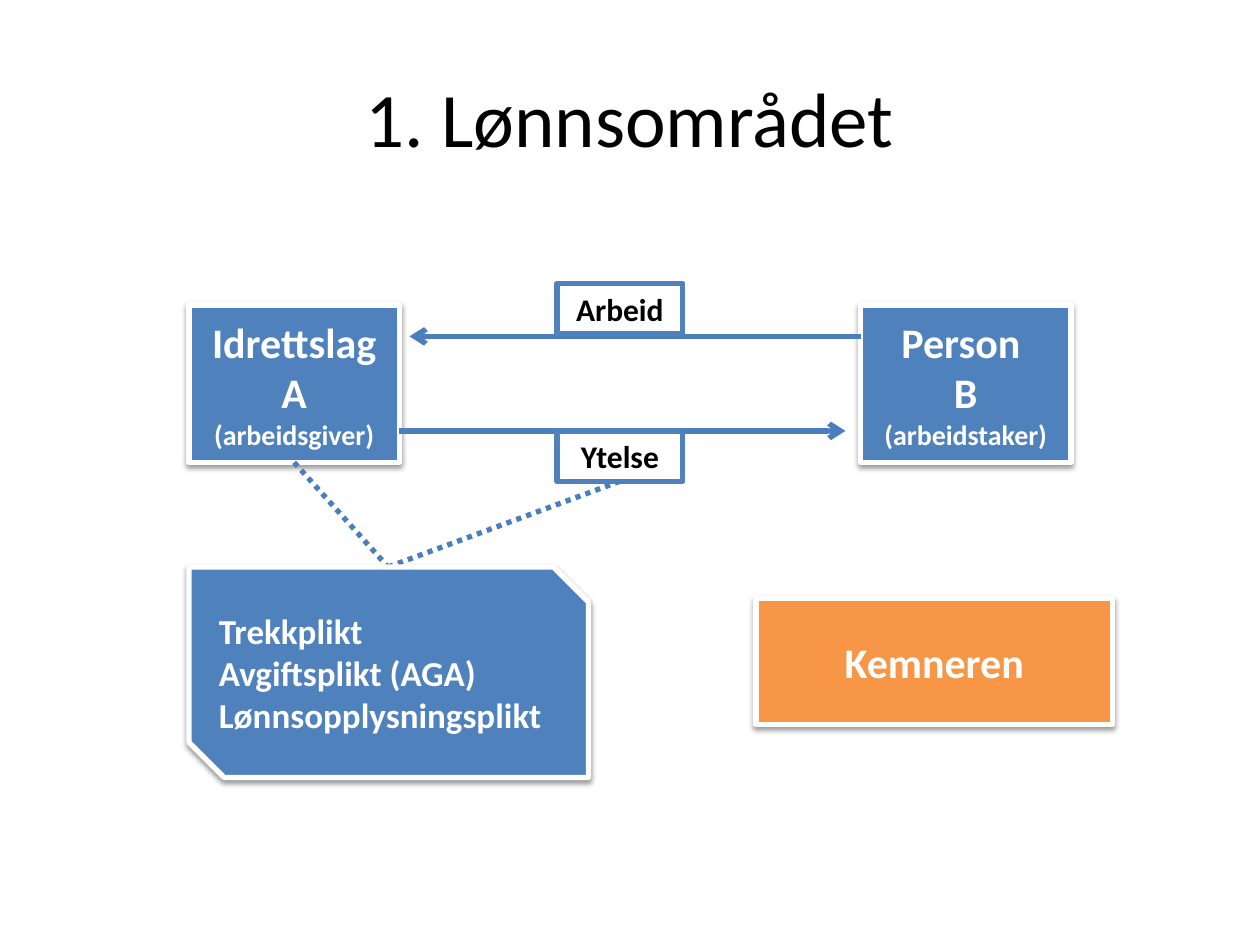
"""Build a slide on the pay relation between a sports club and a person."""
from dataclasses import dataclass
from typing import Optional

from lxml.etree import SubElement
from pptx import Presentation
from pptx.dml.color import RGBColor
from pptx.enum.dml import MSO_LINE_DASH_STYLE as Dash
from pptx.enum.shapes import MSO_CONNECTOR_TYPE as Link, MSO_SHAPE as Kind
from pptx.enum.text import MSO_ANCHOR as Anchor, MSO_AUTO_SIZE as Fit, PP_ALIGN as Align
from pptx.oxml import parse_xml
from pptx.oxml.ns import nsdecls, qn
from pptx.util import Inches, Pt

BLUE = RGBColor(0x4F, 0x81, 0xBD)
LINE_BLUE = RGBColor(0x4B, 0x7E, 0xBC)
ORANGE = RGBColor(0xF7, 0x96, 0x46)
WHITE = RGBColor(0xFF, 0xFF, 0xFF)
BLACK = RGBColor(0, 0, 0)
FONT = "Calibri"
STROKE = Pt(3)
SHADOW = (
    f'<a:effectLst {nsdecls("a")}><a:outerShdw blurRad="{Pt(3.1)}" dist="{Pt(1.6)}" '
    'dir="5400000" rotWithShape="0"><a:srgbClr val="000000"><a:alpha val="38000"/>'
    "</a:srgbClr></a:outerShdw></a:effectLst>"
)


@dataclass(frozen=True)
class Span:
    text: str
    size: float


@dataclass(frozen=True)
class Card:
    left: float
    top: float
    width: float
    height: float
    paragraphs: tuple[tuple[Span, ...], ...]
    fill: Optional[RGBColor] = BLUE
    kind: Kind = Kind.RECTANGLE
    align: Align = Align.CENTER


@dataclass(frozen=True)
class Edge:
    start: tuple[float, float]
    end: tuple[float, float]
    source: Optional[str] = None


CARDS = {
    "employer": Card(1.5, 2.42, 1.67, 1.25, (
        (Span("Idrettslag A", 24),), (Span("(arbeidsgiver)", 16),))),
    "employee": Card(6.83, 2.42, 1.67, 1.25, (
        (Span("Person ", 24),), (Span("B ", 24), Span("(arbeidstaker)", 16)))),
    "work": Card(4.42, 2.25, 1, 0.4, ((Span("Arbeid", 18),),), fill=None),
    "payment": Card(4.42, 3.42, 1, 0.4, ((Span("Ytelse", 18),),), fill=None),
    "collector": Card(6, 4.75, 2.83, 1, ((Span("Kemneren", 24),),), fill=ORANGE),
    "duties": Card(1.5, 4.5, 3.17, 1.67, tuple(
        (Span(duty, 20),)
        for duty in ("Trekkplikt", "Avgiftsplikt (AGA)", "Lønnsopplysningsplikt")),
        kind=Kind.SNIP_2_DIAG_RECTANGLE, align=Align.LEFT),
}
ARROWS = (Edge((3.17, 3.42), (6.71, 3.42)), Edge((6.83, 2.67), (3.25, 2.67)))
DUTIES_TOP = (3.08, 4.5)
DOTTED = (
    Edge((2.33, 3.67), DUTIES_TOP, "employer"),
    Edge((4.92, 3.82), DUTIES_TOP, "payment"),
)


def write_text(frame, paragraphs: tuple[tuple[Span, ...], ...], *, color: RGBColor,
               bold: bool = True, align: Align = Align.CENTER,
               anchor: Anchor = Anchor.MIDDLE) -> None:
    frame.word_wrap = True
    frame.vertical_anchor = anchor
    for index, spans in enumerate(paragraphs):
        para = frame.paragraphs[0] if index == 0 else frame.add_paragraph()
        para.alignment = align
        for span in spans:
            run = para.add_run()
            run.text = span.text
            run.font.name = FONT
            run.font.size = Pt(span.size)
            run.font.bold = bold
            run.font.color.rgb = color


def add_card(page, card: Card):
    box = page.shapes.add_shape(card.kind, Inches(card.left), Inches(card.top),
                                Inches(card.width), Inches(card.height))
    box.shadow.inherit = False
    box.line.width = STROKE
    if card.fill is None:
        box.fill.background()
        box.line.color.rgb = BLUE
        write_text(box.text_frame, card.paragraphs, color=BLACK, anchor=Anchor.TOP)
        box.text_frame.auto_size = Fit.SHAPE_TO_FIT_TEXT
    else:
        box.fill.solid()
        box.fill.fore_color.rgb = card.fill
        box.line.color.rgb = WHITE
        properties = box._element.spPr
        properties.replace(properties.find(qn("a:effectLst")), parse_xml(SHADOW))
        write_text(box.text_frame, card.paragraphs, color=WHITE, align=card.align)
    return box


def add_edge(page, edge: Edge, boxes: dict, *, dotted: bool = False) -> None:
    line = page.shapes.add_connector(Link.STRAIGHT, *map(Inches, edge.start + edge.end))
    line.line.color.rgb = LINE_BLUE
    line.line.width = STROKE
    if dotted:
        line.line.dash_style = Dash.ROUND_DOT
    else:
        SubElement(line.line._get_or_add_ln(), qn("a:tailEnd"), type="arrow")
    SubElement(line._element.spPr, qn("a:effectLst"))
    if edge.source:
        line.begin_connect(boxes[edge.source], 2)


def main() -> None:
    deck = Presentation()
    deck.slide_width, deck.slide_height = Inches(10), Inches(7.5)
    page = deck.slides.add_slide(deck.slide_layouts[6])
    title = page.shapes.add_textbox(Inches(0.5), Inches(0.3), Inches(9), Inches(1.25))
    write_text(title.text_frame, ((Span("1. Lønnsområdet", 44),),), color=BLACK, bold=False)

    boxes = {name: add_card(page, CARDS[name]) for name in ("employer", "employee")}
    for edge in ARROWS:
        add_edge(page, edge, boxes)
    boxes.update({name: add_card(page, CARDS[name]) for name in ("work", "payment")})
    for edge in DOTTED:
        add_edge(page, edge, boxes, dotted=True)
    for name in ("collector", "duties"):
        add_card(page, CARDS[name])
    deck.save("out.pptx")


if __name__ == "__main__":
    main()
